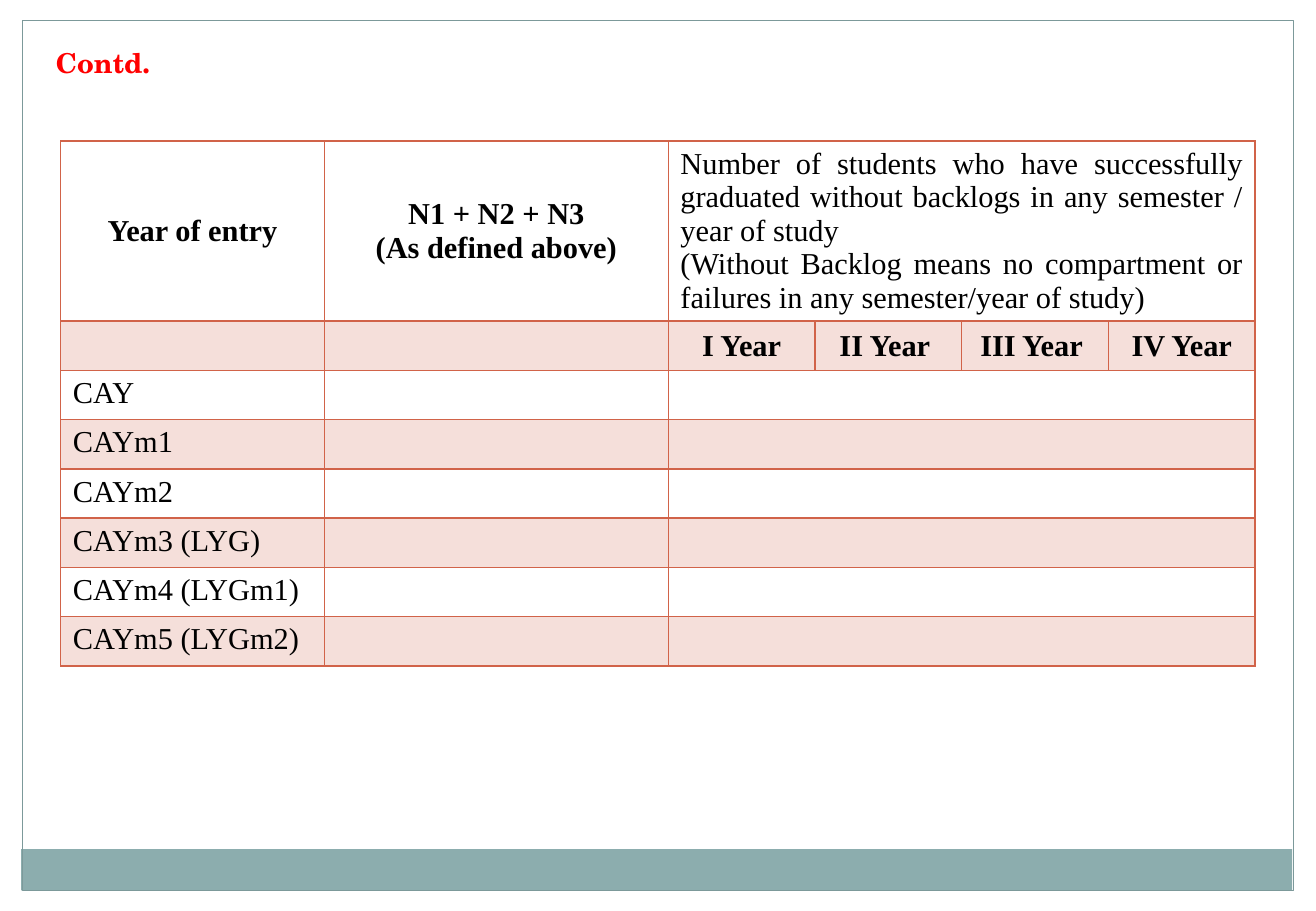
from lxml import etree
from pptx import Presentation
from pptx import util as u
from pptx.dml.color import RGBColor
from pptx.enum import shapes, text
from pptx.oxml.ns import qn

WIDTH, HEIGHT = 10.83, 7.5
COLORS = {"title": "FF0000", "ink": "000000", "band": "8CADAE",
          "frame": "7C999A", "accent": "D16349", "margin": "FFFFFF"}
TABLE_WIDTH, ENTRY_WIDTH, TOTAL_WIDTH = 9.83, 2.17, 2.83
YEAR_WIDTH = (TABLE_WIDTH - ENTRY_WIDTH - TOTAL_WIDTH) / 4
COLUMNS = [ENTRY_WIDTH, TOTAL_WIDTH] + [YEAR_WIDTH] * 4
HEADER_HEIGHT, BODY_HEIGHT = 1.48, 2.84
LEFT, CENTER, JUSTIFY = (text.PP_ALIGN.LEFT, text.PP_ALIGN.CENTER,
                         text.PP_ALIGN.JUSTIFY)
HEADERS = [
    "Year of entry",
    "N1 + N2 + N3\n(As defined above)",
    "Number of students who have successfully graduated without backlogs "
    "in any semester / year of study\n(Without Backlog means no compartment "
    "or failures in any semester/year of study)",
]
YEARS = ["", "", "I Year", "II Year ", "III Year ", "IV Year"]
ENTRIES = ["CAY", "CAYm1", "CAYm2", "CAYm3 (LYG)", "CAYm4 (LYGm1)",
           "CAYm5 (LYGm2)"]


def color(name):
    return RGBColor.from_string(COLORS[name])


def inches(box):
    return [u.Inches(length) for length in box]


def style_font(para, name, size, ink, bold):
    para.font.name, para.font.size, para.font.bold = name, u.Pt(size), bold
    para.font.color.rgb = color(ink)


def add_panel(page, box, fill=None, line=None):
    panel = page.shapes.add_shape(shapes.MSO_SHAPE.RECTANGLE, *inches(box))
    panel.shadow.inherit = False
    if fill:
        panel.fill.solid()
        panel.fill.fore_color.rgb = color(fill)
    else:
        panel.fill.background()
    if line:
        panel.line.color.rgb = color(line)
        panel.line.width = u.Pt(0.75)
    else:
        panel.line.fill.background()


def add_margins(page, box):
    left, top, width, height = box
    side = 0.18
    add_panel(page, (left, top, width, 0.17), fill="margin")
    for edge in (left + width - side, left):
        add_panel(page, (edge, top, side, height), fill="margin")


def add_frame(page, box):
    left, top, width, height = box
    band = 0.34
    add_panel(page, (left - 0.01, top + height - band, width, band), fill="band")
    add_panel(page, box, line="frame")


def add_title(page, box):
    title = page.shapes.title
    title.left, title.top, title.width, title.height = inches(box)
    frame = title.text_frame
    frame.text = "Contd."
    frame.word_wrap = True
    frame.auto_size = text.MSO_AUTO_SIZE.NONE
    frame.vertical_anchor = text.MSO_ANCHOR.TOP
    para = frame.paragraphs[0]
    para.alignment = LEFT
    style_font(para, "TeX Gyre Schola", 16.2, "title", True)


def add_borders(cell):
    properties = cell._tc.get_or_add_tcPr()
    for side in "LRTB":
        line = etree.SubElement(properties, qn(f"a:ln{side}"), w=str(u.Pt(1)))
        fill = etree.SubElement(line, qn("a:solidFill"))
        etree.SubElement(fill, qn("a:srgbClr"), val=COLORS["accent"])


def fill_cell(cell, shaded):
    if not shaded:
        cell.fill.background()
        return
    cell.fill.solid()
    cell.fill.fore_color.rgb = color("accent")
    tint = cell._tc.tcPr.find(qn("a:solidFill")).find(qn("a:srgbClr"))
    etree.SubElement(tint, qn("a:alpha"), val="20000")


def write_cell(cell, words, bold, alignment):
    cell.text = words
    for para in cell.text_frame.paragraphs:
        para.alignment = alignment
        style_font(para, "Times New Roman", 18, "ink", bold)


def add_entry_table(page, box):
    rows = [HEADERS, YEARS] + [[entry] for entry in ENTRIES]
    table = page.shapes.add_table(len(rows), len(COLUMNS), *inches(box)).table
    table.first_row = table.horz_banding = False
    for column, width in zip(table.columns, COLUMNS):
        column.width = u.Inches(width)
    for index, words in enumerate(rows):
        height = BODY_HEIGHT / (len(rows) - 1) if index else HEADER_HEIGHT
        table.rows[index].height = u.Inches(height)
        if index != 1:
            table.cell(index, 2).merge(table.cell(index, 5))
        for position in range(len(COLUMNS)):
            cell = table.cell(index, position)
            add_borders(cell)
            fill_cell(cell, shaded=index % 2 == 1)
            heading = index == 1 or (index == 0 and position < 2)
            write_cell(cell, words[position] if position < len(words) else "",
                       heading, CENTER if heading else JUSTIFY)
            if index < 2:
                cell.vertical_anchor = text.MSO_ANCHOR.MIDDLE


def build_entry_slide(deck):
    page = deck.slides.add_slide(deck.slide_layouts[5])
    add_margins(page, (0, 0, WIDTH, HEIGHT))
    add_frame(page, (WIDTH * 0.017, 0.17, 10.46, 7.16))
    add_entry_table(page, (0.5, 1.16, TABLE_WIDTH, HEADER_HEIGHT + BODY_HEIGHT))
    add_title(page, (0.36, 0.33, 10.11, 0.33))


def main():
    deck = Presentation()
    deck.slide_width, deck.slide_height = inches((WIDTH, HEIGHT))
    build_entry_slide(deck)
    deck.save("out.pptx")


if __name__ == "__main__":
    main()
